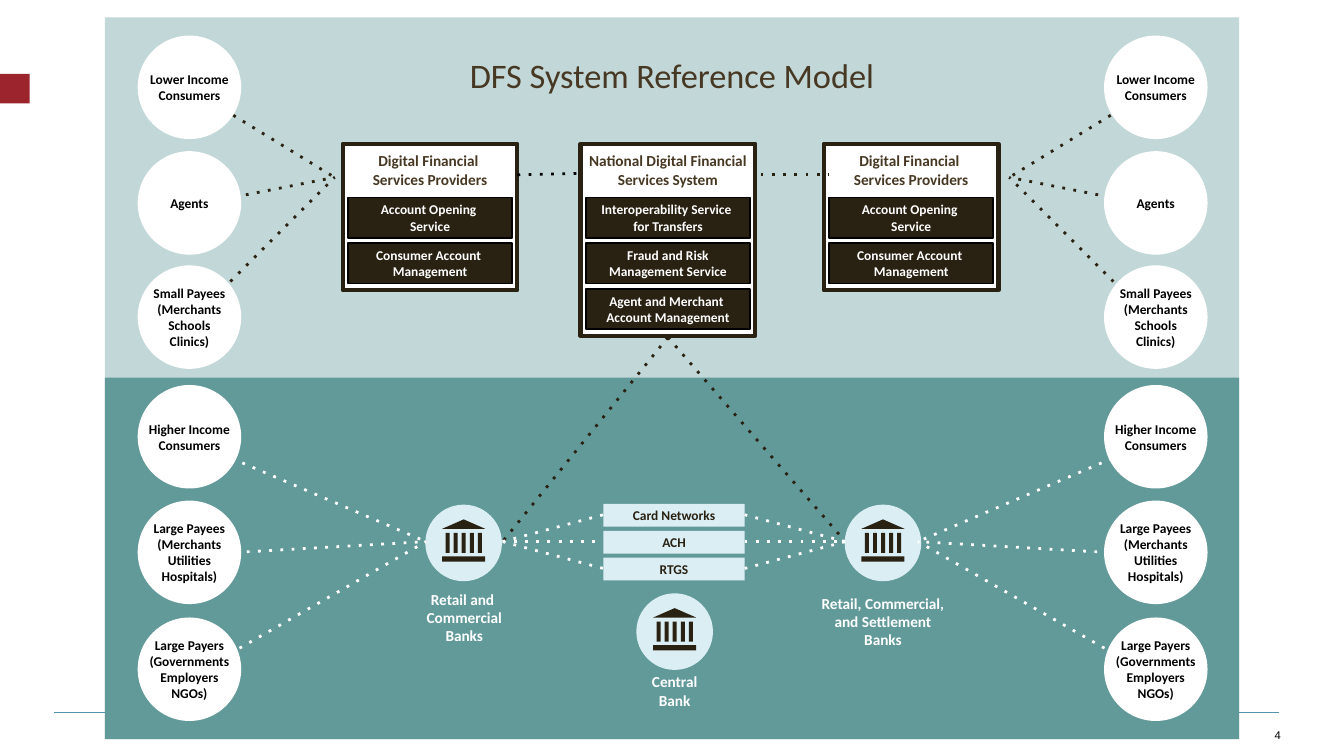
from lxml.etree import SubElement
from pptx import Presentation
from pptx.dml.color import RGBColor
from pptx.enum.shapes import MSO_CONNECTOR, MSO_SHAPE
from pptx.enum.text import MSO_ANCHOR, MSO_AUTO_SIZE, PP_ALIGN
from pptx.oxml.ns import qn
from pptx.util import Inches, Pt

WIDTH = 10
HEIGHT = WIDTH * 9 / 16
COLORS = {"white": "FFFFFF", "black": "000000", "ink": "292112", "brown": "473823",
          "teal": "629999", "ice": "DBEEF4", "red": "9B242D", "blue": "5393AB"}

TITLE = "DFS System Reference Model"
PAGE = "4"
PROVIDER = ("Digital Financial \vServices Providers",
            ["Account Opening \vService", "Consumer Account \vManagement"])
NATIONAL = ("National Digital Financial\vServices System",
            ["Interoperability Service \vfor Transfers",
             "Fraud and Risk\nManagement Service",
             "Agent and Merchant \vAccount Management"])
SYSTEMS = [(4.32, NATIONAL), (2.55, PROVIDER), (6.13, PROVIDER)]
RAILS = ["Card Networks", "ACH", "RTGS"]
BANKS = [(3.45, 4.04), (5.02, 4.7), (6.57, 4.04)]
BANK_LABELS = [
    ("Retail and \vCommercial Banks", (3.09, 4.39, 0.73, 0.1), MSO_ANCHOR.TOP),
    ("Central Bank", (4.78, 5.09, 0.48, 0.1), MSO_ANCHOR.MIDDLE),
    ("Retail, Commercial, and Settlement Banks", (6.1, 4.42, 0.94, 0.23), MSO_ANCHOR.TOP),
]
PARTIES = [
    ("Lower Income Consumers", 0.65, (1.38, 0.64)),
    ("Agents", 1.51, (1.42, 1.53)),
    ("Small Payees\n(Merchants\nSchools\nClinics)", 2.36, (1.42, 2.39)),
    ("Higher Income\vConsumers", 3.25, (1.42, 3.28)),
    ("Large Payees\n(Merchants\nUtilities Hospitals)", 4.11, (1.42, 4.13)),
    ("Large Payers\n(Governments\vEmployers\nNGOs)", 4.98, (1.42, 5.03)),
]
UPPER_PARTIES = 3
PARTY_COLUMNS = (1.41, 8.6)
PARTY_SIZE, PARTY_TEXT_SIZE = 0.77, 0.87
PROVIDER_HUB, BANK_HUB = (2.49, 1.32), (3.17, 4.03)

SYSTEM_WIDTH, SYSTEM_TOP = 1.3, 1.07
SERVICE_TOP, SERVICE_STEP, SERVICE_SIZE = 1.47, 0.34, (1.22, 0.3)
RAIL_LEFT, RAIL_TOP, RAIL_STEP, RAIL_SIZE = 4.49, 3.75, 0.2, (1.05, 0.17)
BANK_LEFT, BANK_RIGHT, BANK_ROW = 3.74, 6.29, 4.03
NATIONAL_FOOT = (4.97, 2.51)

FRAME = {"margin_left": 0, "margin_right": 0, "margin_top": 0, "margin_bottom": 0,
         "word_wrap": True, "auto_size": MSO_AUTO_SIZE.NONE}
SMALL = {"size": Pt(7.2), "bold": True, "name": "Calibri"}
LABEL = {"size": Pt(8.2), "bold": True, "name": "Calibri"}
HEADING = {"size": Pt(18.4), "bold": False, "name": "Calibri"}
NUMBER = {"size": Pt(6), "bold": False, "name": "Arial"}

deck = Presentation()
deck.slide_width, deck.slide_height = Inches(WIDTH), Inches(HEIGHT)
slide = deck.slides.add_slide(deck.slide_layouts[5])


def color(name):
    return RGBColor.from_string(COLORS[name])


def set_all(target, values):
    for name, value in values.items():
        setattr(target, name, value)


def write(holder, text, font, ink, anchor=MSO_ANCHOR.MIDDLE, align=PP_ALIGN.CENTER):
    frame = holder.text_frame
    set_all(frame, FRAME | {"vertical_anchor": anchor})
    frame.text = text
    for paragraph in frame.paragraphs:
        paragraph.alignment = align
        for run in paragraph.runs:
            set_all(run.font, font)
            run.font.color.rgb = color(ink)


def draw(kind, box, fill=None, line=None, weight=1, parent=slide):
    shape = parent.shapes.add_shape(kind, *map(Inches, box))
    shape.shadow.inherit = False
    if fill:
        shape.fill.solid()
        shape.fill.fore_color.rgb = color(fill)
    else:
        shape.fill.background()
    if line:
        shape.line.color.rgb = color(line)
        shape.line.width = Pt(weight)
    else:
        shape.line.fill.background()
    return shape


def label(text, box, font, ink, **layout):
    write(slide.shapes.add_textbox(*map(Inches, box)), text, font, ink, **layout)


def link(start, end, ink, weight=1.5, dotted=True):
    line = slide.shapes.add_connector(MSO_CONNECTOR.STRAIGHT, *map(Inches, start + end))
    line.line.color.rgb = color(ink)
    line.line.width = Pt(weight)
    if dotted:
        SubElement(line.line._get_or_add_ln(), qn("a:prstDash"), val="dot")
    SubElement(line._element.spPr, qn("a:effectLst"))


def centred(x, y, width, height):
    return x - width / 2, y - height / 2, width, height


def mirror(point):
    return WIDTH - point[0], point[1]


def draw_bank(x, y):
    draw(MSO_SHAPE.OVAL, centred(x, y, 0.57, 0.57), "ice")
    icon = slide.shapes.add_group_shape()
    draw(MSO_SHAPE.ISOSCELES_TRIANGLE, centred(x, y - 0.14, 0.32, 0.07), "ink", parent=icon)
    draw(MSO_SHAPE.RECTANGLE, centred(x, y + 0.12, 0.32, 0.04), "ink", parent=icon)
    for column in range(-2, 3):
        box = centred(x + 0.06 * column, y, 0.15, 0.03)
        draw(MSO_SHAPE.RECTANGLE, box, "ink", parent=icon).rotation = 90


def draw_system(left, heading, services):
    height = 0.41 + SERVICE_STEP * len(services)
    draw(MSO_SHAPE.RECTANGLE, (left, SYSTEM_TOP, SYSTEM_WIDTH, height), "white", "ink", 2.25)
    label(heading, (left, 1.11, SYSTEM_WIDTH, 0.31), LABEL, "brown")
    for row, service in enumerate(services):
        box = (left + 0.04, SERVICE_TOP + row * SERVICE_STEP, *SERVICE_SIZE)
        write(draw(MSO_SHAPE.RECTANGLE, box, "ink", "black"), service, SMALL, "white")


def draw_party(text, x, y):
    party = slide.shapes.add_group_shape()
    draw(MSO_SHAPE.OVAL, centred(x, y, PARTY_SIZE, PARTY_SIZE), "white", parent=party)
    area = centred(x, y, PARTY_TEXT_SIZE, PARTY_TEXT_SIZE)
    write(draw(MSO_SHAPE.OVAL, area, parent=party), text, SMALL, "black")


draw(MSO_SHAPE.RECTANGLE, (0, 0.55, 0.22, 0.22), "red")
link((0.4, 5.3), (9.52, 5.3), "blue", 0.5, dotted=False)
label(PAGE, (9.32, 5.35, 0.21, 0.17), NUMBER, "black",
      anchor=MSO_ANCHOR.BOTTOM, align=PP_ALIGN.RIGHT)
backdrop = draw(MSO_SHAPE.RECTANGLE, (0.78, 0.13, 8.44, 5.37), "teal")
tint = backdrop._element.spPr.find(qn("a:solidFill"))[0]
SubElement(tint, qn("a:alpha"), val="39000")
draw(MSO_SHAPE.RECTANGLE, (0.78, 2.81, 8.44, 2.69), "teal")

title = slide.shapes.title
set_all(title, dict(zip(("left", "top", "width", "height"),
                        map(Inches, (2.79, 0.4, 4.42, 0.31)))))
write(title, TITLE, HEADING, "brown", anchor=MSO_ANCHOR.TOP)
slide.shapes._spTree.append(title._element)

for left, (heading, services) in SYSTEMS:
    draw_system(left, heading, services)
link((3.85, 1.3), (4.32, 1.29), "black")
link((5.66, 1.3), (6.17, 1.3), "ink")

for bank_x in (BANK_LEFT, BANK_RIGHT):
    link(NATIONAL_FOOT, (bank_x, BANK_ROW), "ink")
for x, y in BANKS:
    draw_bank(x, y)
for text, box, anchor in BANK_LABELS:
    label(text, box, LABEL, "white", anchor=anchor)

for row, rail in enumerate(RAILS):
    top = RAIL_TOP + row * RAIL_STEP
    middle = BANK_ROW + (row - 1) * RAIL_STEP
    link((BANK_LEFT, BANK_ROW), (RAIL_LEFT, middle), "white")
    link((RAIL_LEFT + RAIL_SIZE[0], middle), (BANK_RIGHT, BANK_ROW), "white")
    write(draw(MSO_SHAPE.RECTANGLE, (RAIL_LEFT, top, *RAIL_SIZE), "ice"), rail, SMALL, "ink")

for row, (text, y, port) in enumerate(PARTIES):
    hub, ink = (PROVIDER_HUB, "ink") if row < UPPER_PARTIES else (BANK_HUB, "white")
    link(port, hub, ink)
    link(mirror(port), mirror(hub), ink)
    for x in PARTY_COLUMNS:
        draw_party(text, x, y)

deck.save("out.pptx")
